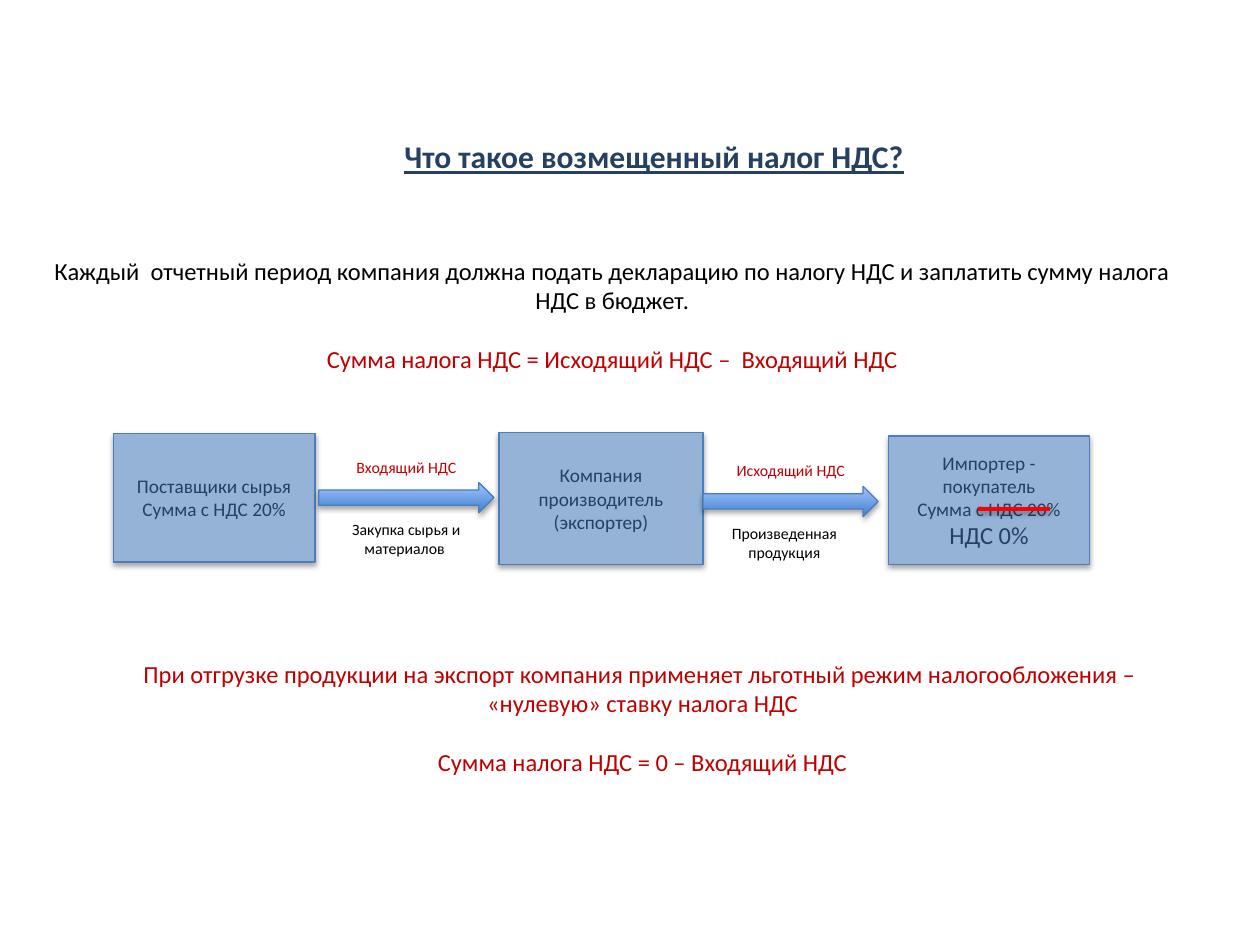
from pptx import Presentation
from pptx.dml.color import RGBColor
from pptx.enum.shapes import MSO_CONNECTOR, MSO_SHAPE
from pptx.enum.text import MSO_ANCHOR, MSO_AUTO_SIZE, PP_ALIGN
from pptx.util import Inches, Pt

COLORS = {
    "navy": "254061",
    "red": "C00000",
    "black": "000000",
    "box": "95B3D7",
    "outline": "4B7EBC",
    "arrow_dark": "3F80CE",
    "arrow_light": "A4C4FF",
    "strike": "FF0000",
}


def color(name):
    return RGBColor.from_string(COLORS[name])


def write(frame, lines, align=PP_ALIGN.CENTER):
    """Fill a frame with (text, size, color, space before) lines."""
    frame.word_wrap = True
    for index, (text, size, shade, gap) in enumerate(lines):
        para = frame.paragraphs[0] if index == 0 else frame.add_paragraph()
        para.alignment = align
        para.space_before = Pt(gap)
        span = para.add_run()
        span.text = text
        span.font.color.rgb = color(shade)
        for name, value in {"name": "Calibri", "size": Pt(size)}.items():
            setattr(span.font, name, value)


deck = Presentation()
deck.slide_width, deck.slide_height = Inches(10), Inches(7.5)
page = deck.slides.add_slide(deck.slide_layouts[5])

# Title
title = page.shapes.title
title.left, title.top = Inches(3.11), Inches(1.04)
title.width, title.height = Inches(4.2), Inches(0.4)
write(title.text_frame, [("Что такое возмещенный налог НДС?", 18, "navy", 0)], PP_ALIGN.LEFT)
title.text_frame.word_wrap = False
title.text_frame.auto_size = MSO_AUTO_SIZE.NONE
title.text_frame.vertical_anchor = MSO_ANCHOR.TOP
title_font = title.text_frame.paragraphs[0].runs[0].font
title_font.bold = title_font.underline = True

# Companies in the supply chain
companies = [
    (0.9, 3.44, 1.6, 1.02, [("Поставщики сырья", 11), ("Сумма с НДС 20%", 11)]),
    (3.96, 3.43, 1.62, 1.05, [("Компания производитель (экспортер)", 11)]),
    (7.05, 3.46, 1.6, 1.02,
     [("Импортер - покупатель", 11), ("Сумма с НДС 20%", 11), ("НДС 0%", 14)]),
]
for *place, lines in companies:
    box = page.shapes.add_shape(MSO_SHAPE.RECTANGLE, *map(Inches, place))
    box.fill.solid()
    box.fill.fore_color.rgb = color("box")
    box.line.color.rgb = color("outline")
    box.line.width = Pt(0.75)
    box.text_frame.vertical_anchor = MSO_ANCHOR.MIDDLE
    write(box.text_frame, [(text, size, "navy", 0) for text, size in lines])

# Crossed-out tax rate
strike = page.shapes.add_connector(
    MSO_CONNECTOR.STRAIGHT, Inches(7.76), Inches(4.04), Inches(8.33), Inches(4.04))
strike.line.color.rgb = color("strike")
strike.line.width = Pt(2)

# Flows between the companies
for left, top in [(2.53, 3.83), (5.58, 3.86)]:
    arrow = page.shapes.add_shape(
        MSO_SHAPE.RIGHT_ARROW, Inches(left), Inches(top), Inches(1.39), Inches(0.24))
    arrow.fill.gradient()
    arrow.fill.gradient_angle = 90
    for stop, shade in zip(arrow.fill.gradient_stops, ("arrow_dark", "arrow_light")):
        stop.color.rgb = color(shade)
    arrow.line.color.rgb = color("outline")
    arrow.line.width = Pt(0.75)

# Flow labels and explanations
texts = [
    (2.66, 3.58, 1.13, 0.25, [("Входящий НДС", 9, "red", 0)]),
    (2.66, 4.08, 1.13, 0.4, [("Закупка сырья и материалов ", 9, "black", 0)]),
    (5.71, 3.61, 1.13, 0.25, [("Исходящий НДС", 9, "red", 0)]),
    (5.66, 4.11, 1.13, 0.4, [("Произведенная продукция", 9, "black", 0)]),
    (0.23, 1.98, 9.26, 1.04, [
        ("Каждый  отчетный период компания должна подать декларацию по налогу НДС "
         "и заплатить сумму налога НДС в бюджет.", 14, "black", 0),
        ("Сумма налога НДС = Исходящий НДС –  Входящий НДС", 14, "red", 17),
    ]),
    (0.56, 5.18, 9.08, 1.04, [
        ("При отгрузке продукции на экспорт компания применяет льготный режим "
         "налогообложения – ", 14, "red", 0),
        ("«нулевую» ставку налога НДС", 14, "red", 0),
        ("Сумма налога НДС = 0 – Входящий НДС", 14, "red", 17),
    ]),
]
for *place, lines in texts:
    box = page.shapes.add_textbox(*map(Inches, place))
    write(box.text_frame, lines)

deck.save("out.pptx")
